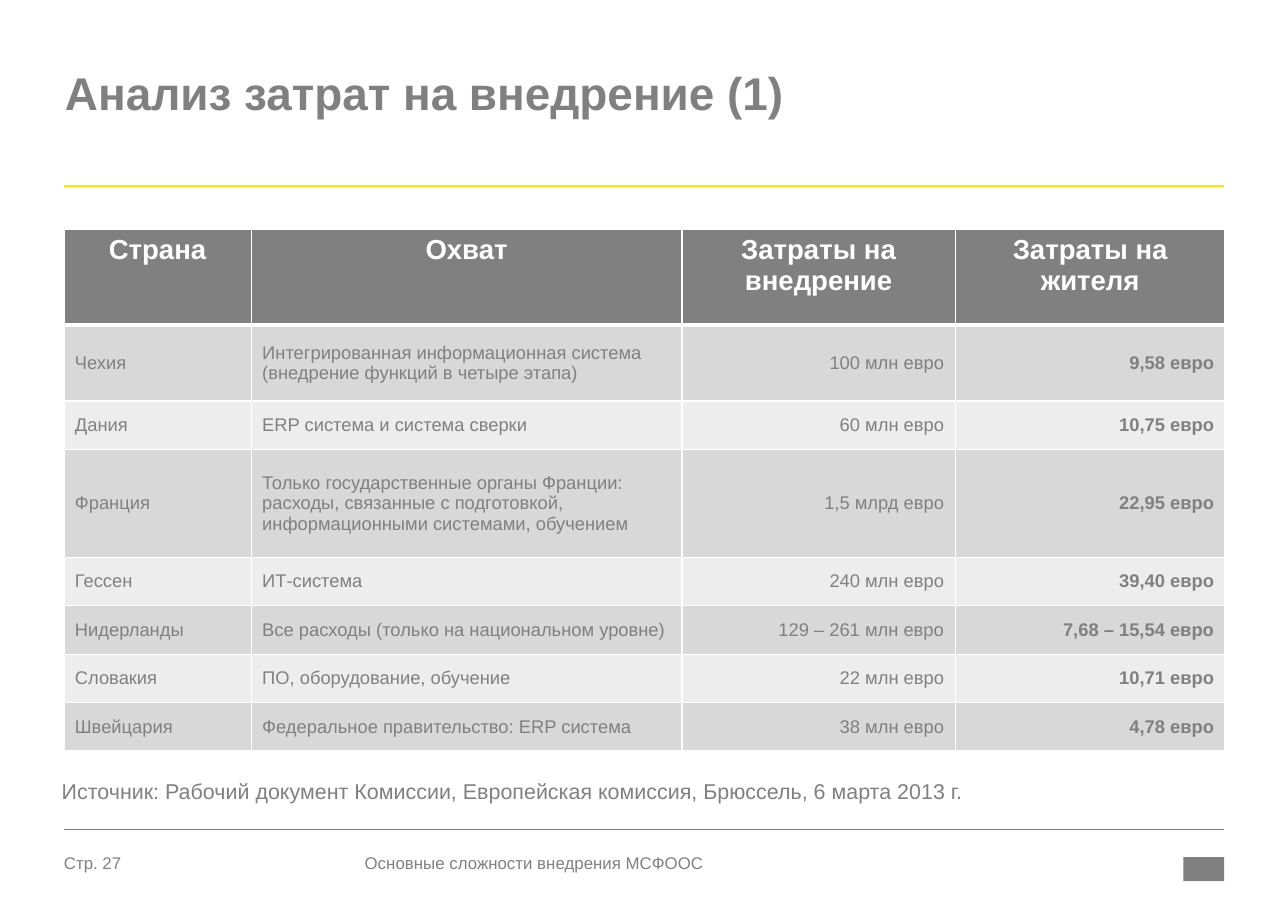
import pptx
import pptx.dml.color
import pptx.enum.shapes
import pptx.enum.text
import pptx.oxml
import pptx.oxml.ns
import pptx.util
from lxml import etree

GRAY = pptx.dml.color.RGBColor(0x80, 0x80, 0x80)
YELLOW = pptx.dml.color.RGBColor(0xFF, 0xE6, 0x00)
WHITE = pptx.dml.color.RGBColor(0xFF, 0xFF, 0xFF)
DARK_BAND = pptx.dml.color.RGBColor(0xD8, 0xD8, 0xD8)
LIGHT_BAND = pptx.dml.color.RGBColor(0xED, 0xED, 0xED)
ALIGN = pptx.enum.text.PP_ALIGN
ANCHOR = pptx.enum.text.MSO_ANCHOR
Inches = pptx.util.Inches
Pt = pptx.util.Pt

LEFT, RIGHT = 0.58, 11.11


def write_text(frame, text, size=12, color=GRAY, bold=False, align=ALIGN.LEFT, spacing=None):
    frame.word_wrap = True
    paragraph = frame.paragraphs[0]
    paragraph.alignment = align
    paragraph.line_spacing = spacing
    run = paragraph.add_run()
    run.text = text
    run.font.name = "Arial"
    run.font.size = Pt(size)
    run.font.bold = bold
    run.font.color.rgb = color


def add_border(cell, side, width):
    properties = cell._tc.get_or_add_tcPr()
    border = etree.SubElement(properties, pptx.oxml.ns.qn(f"a:ln{side}"), w=str(Pt(width)))
    fill = etree.SubElement(border, pptx.oxml.ns.qn("a:solidFill"))
    etree.SubElement(fill, pptx.oxml.ns.qn("a:srgbClr"), val=str(WHITE))


presentation = pptx.Presentation()
presentation.slide_width = Inches(11.69)
presentation.slide_height = Inches(8.27)
slide = presentation.slides.add_slide(presentation.slide_layouts[6])

for top, color, width in [(1.69, YELLOW, 1.5), (7.53, GRAY, 0.25)]:
    rule = slide.shapes.add_connector(
        pptx.enum.shapes.MSO_CONNECTOR.STRAIGHT,
        Inches(LEFT), Inches(top), Inches(RIGHT), Inches(top))
    rule.line.color.rgb = color
    rule.line.width = Pt(width)
    etree.SubElement(rule._element.spPr, pptx.oxml.ns.qn("a:effectLst"))

texts = [
    (LEFT + 0.01, 0.66, 10.53, 1.04, "Анализ затрат на внедрение (1)",
     {"size": 30, "bold": True, "spacing": 0.85}),
    (0.56, 7.06, 10.9, 0.24,
     "Источник: Рабочий документ Комиссии, Европейская комиссия, Брюссель, 6 марта 2013 г.",
     {"size": 14}),
    (LEFT, 7.74, 0.92, 0.24, "Стр. 27", {"size": 11}),
    (3.31, 7.74, 4.39, 0.24, "Основные сложности внедрения МСФООС", {"size": 11}),
]
for left, top, width, height, text, style in texts:
    box = slide.shapes.add_textbox(Inches(left), Inches(top), Inches(width), Inches(height))
    frame = box.text_frame
    frame.margin_left = frame.margin_right = frame.margin_top = frame.margin_bottom = 0
    write_text(frame, text, **style)

emblem = slide.shapes.add_shape(
    pptx.enum.shapes.MSO_SHAPE.RECTANGLE,
    Inches(10.74), Inches(7.78), Inches(0.37), Inches(0.22))
emblem.shadow.inherit = False
emblem.fill.solid()
emblem.fill.fore_color.rgb = GRAY
emblem.line.fill.background()

rows = [
    ("Страна", "Охват", "Затраты на внедрение", "Затраты на жителя"),
    ("Чехия", "Интегрированная информационная система (внедрение функций в четыре этапа)",
     "100 млн евро", "9,58 евро"),
    ("Дания", "ERP система и система сверки", "60 млн евро", "10,75 евро"),
    ("Франция", "Только государственные органы Франции: расходы, связанные с подготовкой, "
     "информационными системами, обучением", "1,5 млрд евро", "22,95 евро"),
    ("Гессен", "ИТ-система", "240 млн евро", "39,40 евро"),
    ("Нидерланды", "Все расходы (только на национальном уровне)",
     "129 – 261 млн евро", "7,68 – 15,54 евро"),
    ("Словакия", "ПО, оборудование, обучение", "22 млн евро", "10,71 евро"),
    ("Швейцария", "Федеральное правительство: ERP система", "38 млн евро", "4,78 евро"),
]
column_widths = [1.7, 3.91, 2.48, 2.45]
row_heights = [0.84, 0.67, 0.44, 0.98] + [0.44] * 4
row_heights[:2] = [0.87, 0.69]

table = slide.shapes.add_table(
    len(rows), len(column_widths), Inches(LEFT), Inches(2.08),
    Inches(sum(column_widths)), Inches(sum(row_heights))).table
for column, width in zip(table.columns, column_widths):
    column.width = Inches(width)
for row, height in zip(table.rows, row_heights):
    row.height = Inches(height)

for row_index, row in enumerate(rows):
    header = row_index == 0
    band = GRAY if header else DARK_BAND if row_index % 2 else LIGHT_BAND
    for column_index, text in enumerate(row):
        cell = table.cell(row_index, column_index)
        add_border(cell, "L", 1)
        add_border(cell, "R", 1)
        add_border(cell, "T", 3 if row_index == 1 else 1)
        add_border(cell, "B", 3 if header else 1)
        cell.fill.solid()
        cell.fill.fore_color.rgb = band
        if header:
            write_text(cell.text_frame, text, size=18, color=WHITE, bold=True, align=ALIGN.CENTER)
        else:
            cell.vertical_anchor = ANCHOR.MIDDLE
            write_text(cell.text_frame, text, bold=column_index == 3,
                       align=ALIGN.RIGHT if column_index >= 2 else ALIGN.LEFT)

presentation.save("out.pptx")
